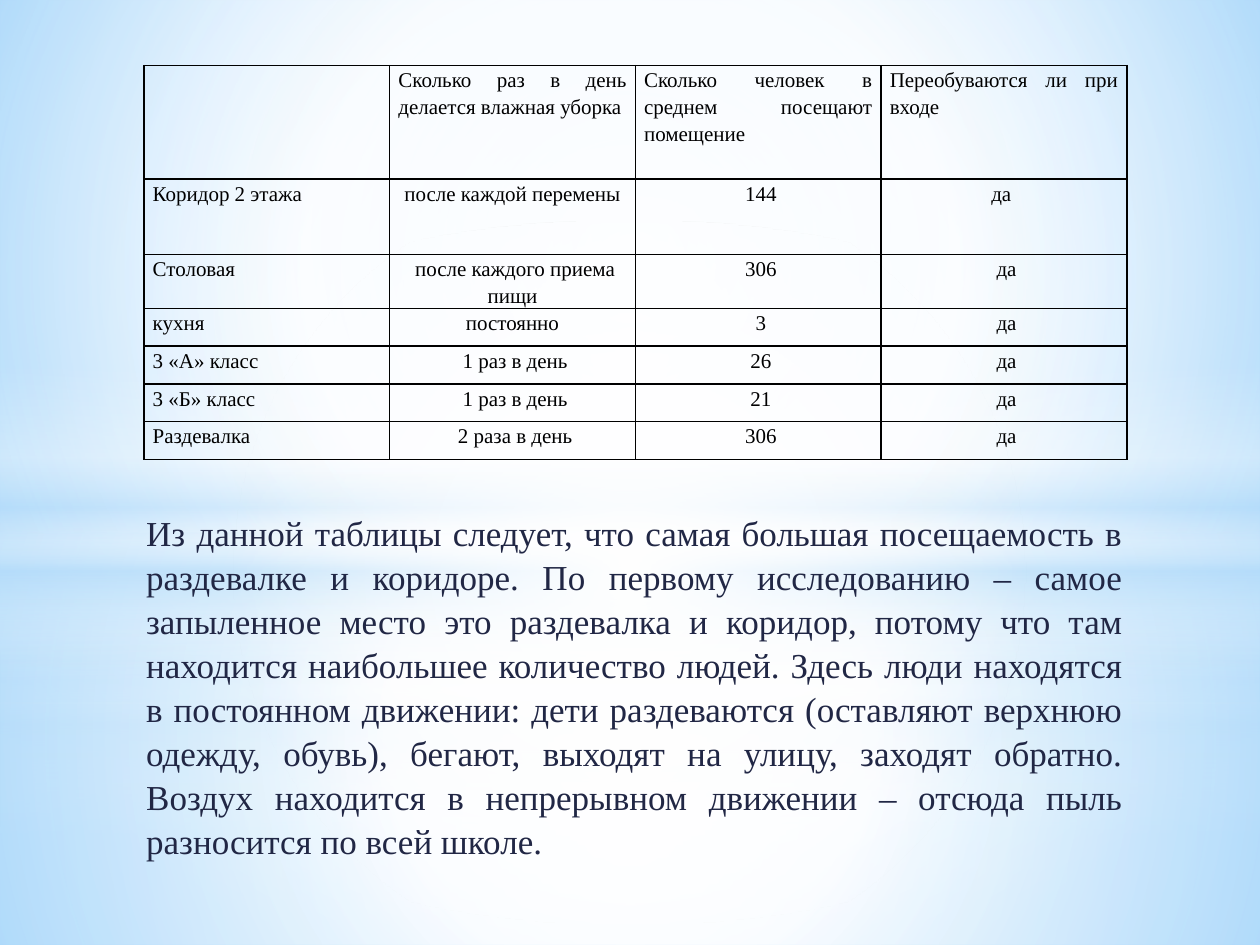
from lxml.etree import SubElement
from pptx import Presentation
from pptx.dml.color import RGBColor
from pptx.enum.shapes import MSO_SHAPE
from pptx.enum.text import MSO_ANCHOR, MSO_AUTO_SIZE, PP_ALIGN
from pptx.oxml import parse_xml
from pptx.oxml.ns import nsdecls, qn
from pptx.util import Pt

HUES = {"white": "FFFFFF", "pale": "B4DCFA", "sky": "9ED5FF",
        "deep": "5BB9FF", "navy": "212745", "black": "000000"}
FONT = "Times New Roman"
MID = (50, 50, 50, 50)

UPPER = [(0, "white", 90), (48, "white", 63), (100, "pale", 80)]
LOWER = [(0, "white", 92), (37, "white", 77), (100, "pale", 80)]
BAND = [(0, "white", 0), (29, "white", 30), (45, "pale", 40),
        (55, "white", 26), (65, "pale", 60), (100, "white", 0)]
GLOW = [(0, "white", 100), (55, "white", 0)]
BASE = [(0, "sky", 100), (60, "white", 100), (100, "deep", 100)]

ROWS = [
    ["", "Сколько раз в день делается влажная уборка",
     "Сколько человек в среднем посещают помещение",
     "Переобуваются ли при входе"],
    ["Коридор 2 этажа", "после каждой перемены", " 144", "да "],
    ["Столовая", " после каждого приема пищи", " 306", " да"],
    ["кухня", " постоянно ", " 3", " да"],
    ["3 «А» класс", " 1 раз в день", " 26", " да"],
    ["3 «Б» класс", " 1 раз в день", " 21", " да"],
    ["Раздевалка ", " 2 раза в день", " 306", " да"],
]
NOTE = ("Из данной таблицы следует, что самая большая посещаемость в "
        "раздевалке и коридоре. По первому исследованию – самое запыленное "
        "место это раздевалка и коридор, потому что там находится наибольшее "
        "количество людей. Здесь люди находятся в постоянном движении: дети "
        "раздеваются (оставляют верхнюю одежду, обувь), бегают, выходят на "
        "улицу, заходят обратно. Воздух находится в непрерывном движении – "
        "отсюда пыль разносится по всей школе.")


def paint(node, stops, focus=None):
    grad = parse_xml(f'<a:gradFill {nsdecls("a")} rotWithShape="1"/>')
    stop_list = SubElement(grad, qn("a:gsLst"))
    for pos, hue, alpha in stops:
        stop = SubElement(stop_list, qn("a:gs"), pos=str(pos * 1000))
        color = SubElement(stop, qn("a:srgbClr"), val=HUES[hue])
        if alpha < 100:
            SubElement(color, qn("a:alpha"), val=str(alpha * 1000))
    if focus:
        ring = SubElement(grad, qn("a:path"), path="circle")
        sides = {k: str(v * 1000) for k, v in zip("ltrb", focus)}
        SubElement(ring, qn("a:fillToRect"), sides)
    else:
        SubElement(grad, qn("a:lin"), ang="5400000", scaled="0")
    old = node.find(qn("a:noFill"))
    node.replace(old, grad)


def add_layer(slide, kind, top, height, stops, focus, num):
    shape = slide.shapes.add_shape(kind, 0, Pt(top), Pt(720), Pt(height))
    shape.shadow.inherit = False
    shape.line.fill.background()
    shape.fill.background()
    paint(shape.element.spPr, stops, focus)
    shape.element.nvSpPr.cNvPr.set("id", str(num))
    slide.slide_layout.shapes.element.append(shape.element)


def add_back(slide):
    slide.background.fill.background()
    paint(slide.element.find(".//" + qn("p:bgPr")), BASE, (20, 10, 20, 60))
    rect, oval = MSO_SHAPE.RECTANGLE, MSO_SHAPE.OVAL
    num = 20
    for split, band in ((401.76, 296.64), (304.56, 208.8)):
        layers = [(rect, split, 540 - split, LOWER, MID),
                  (rect, 0, split, UPPER, MID),
                  (rect, band, 180, BAND, None),
                  (oval, 126, 401.76, GLOW, MID)]
        for layer in layers:
            add_layer(slide, *layer, num)
            num += 1


def style(para, size, hue, align, space):
    para.alignment = align
    para.line_spacing = space
    for run in para.runs:
        run.font.size = Pt(size)
        run.font.name = FONT
        run.font.color.rgb = RGBColor.from_string(HUES[hue])


def add_edges(cell):
    props = cell._tc.get_or_add_tcPr()
    for spot, side in enumerate(("lnL", "lnR", "lnT", "lnB")):
        line = parse_xml(f'<a:{side} {nsdecls("a")} w="12700"/>')
        fill = SubElement(line, qn("a:solidFill"))
        SubElement(fill, qn("a:srgbClr"), val=HUES["black"])
        props.insert(spot, line)


def fill_cell(cell, text, align):
    cell.margin_left = cell.margin_right = Pt(5)
    cell.margin_top = cell.margin_bottom = 0
    cell.fill.background()
    add_edges(cell)
    cell.text_frame.text = text
    style(cell.text_frame.paragraphs[0], 12, "black", align, 1.15)


def add_grid(slide):
    table = slide.shapes.add_table(len(ROWS), 4, Pt(82.3), Pt(37.5),
                                   Pt(561.6), Pt(216)).table
    table.first_row = table.horz_banding = False
    for col in table.columns:
        col.width = Pt(140.4)
    for i, texts in enumerate(ROWS):
        table.rows[i].height = Pt({0: 64.8, 1: 43.2}.get(i, 21.6))
        for j, text in enumerate(texts):
            center = i > 0 and j > 0
            align = PP_ALIGN.CENTER if center else PP_ALIGN.JUSTIFY
            fill_cell(table.cell(i, j), text, align)


def add_note(slide):
    body = slide.placeholders[1]
    body.left, body.top = Pt(76.3), Pt(287.3)
    body.width, body.height = Pt(572.4), Pt(209.5)
    frame = body.text_frame
    frame.word_wrap = True
    frame.auto_size = MSO_AUTO_SIZE.NONE
    frame.vertical_anchor = MSO_ANCHOR.TOP
    frame.text = NOTE
    para = frame.paragraphs[0]
    style(para, 20, "navy", PP_ALIGN.JUSTIFY, 1.05)
    para.space_before, para.space_after = Pt(4), Pt(3)
    props = para._p.get_or_add_pPr()
    props.set("marL", "0")
    props.set("indent", "0")
    SubElement(props, qn("a:buNone"))


def main():
    deck = Presentation()
    deck.slide_width, deck.slide_height = Pt(720), Pt(540)
    slide = deck.slides.add_slide(deck.slide_layouts[1])
    title = slide.shapes.title.element
    title.getparent().remove(title)
    add_back(slide)
    add_note(slide)
    add_grid(slide)
    deck.save("out.pptx")


if __name__ == "__main__":
    main()
